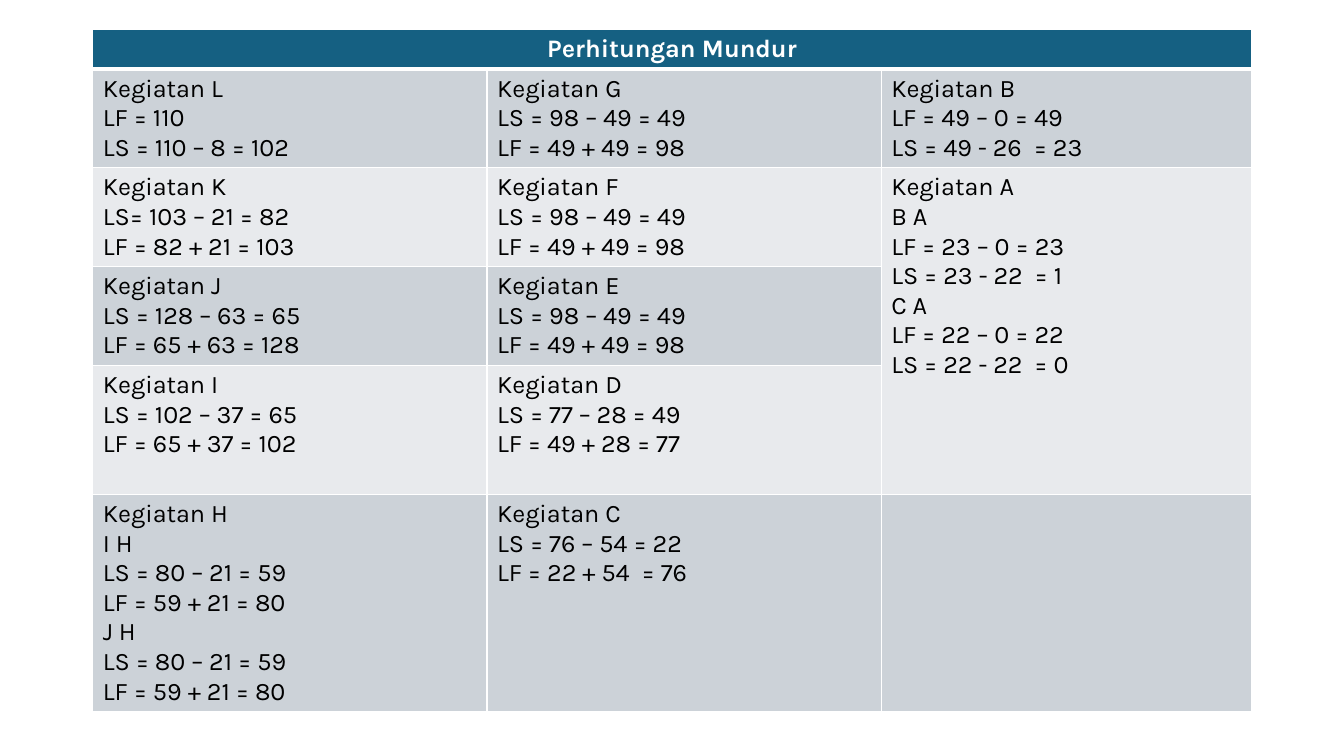
"""Build the slide with the backward-pass calculation table."""
from lxml import etree
from pptx import Presentation
from pptx.dml.color import RGBColor
from pptx.enum.text import PP_ALIGN
from pptx.oxml.ns import qn
from pptx.util import Inches, Pt

CENTER, LEFT = PP_ALIGN.CENTER, PP_ALIGN.LEFT
FONT = "Karla"
COLORS = {"header": "156082", "dark": "CCD2D8", "light": "E8EAED",
          "text": "000000", "white": "FFFFFF"}
TITLE = "Perhitungan Mundur"
ROWS = [
    (["Kegiatan L", "LF = 110", "LS = 110 – 8 = 102"],
     ["Kegiatan G", "LS = 98 – 49 = 49", "LF = 49 + 49 = 98"],
     ["Kegiatan B", "LF = 49 – 0 = 49", "LS = 49 - 26  = 23"]),
    (["Kegiatan K", "LS= 103 – 21 = 82", "LF = 82 + 21 = 103"],
     ["Kegiatan F", "LS = 98 – 49 = 49", "LF = 49 + 49 = 98"],
     ["Kegiatan A", "B A", "LF = 23 – 0 = 23", "LS = 23 - 22  = 1",
      "C A", "LF = 22 – 0 = 22", "LS = 22 - 22  = 0"]),
    (["Kegiatan J", "LS = 128 – 63 = 65", "LF = 65 + 63 = 128"],
     ["Kegiatan E", "LS = 98 – 49 = 49", "LF = 49 + 49 = 98"], []),
    (["Kegiatan I", "LS = 102 – 37 = 65", "LF = 65 + 37 = 102"],
     ["Kegiatan D", "LS = 77 – 28 = 49", "LF = 49 + 28 = 77"], []),
    (["Kegiatan H", "I H", "LS = 80 – 21 = 59", "LF = 59 + 21 = 80",
      "J H", "LS = 80 – 21 = 59", "LF = 59 + 21 = 80"],
     ["Kegiatan C", "LS = 76 – 54 = 22", "LF = 22 + 54  = 76"], []),
]
COL_WIDTHS = [3.91, 3.91, 3.67]
ROW_HEIGHTS = [0.38, 0.98, 0.98, 0.98, 1.28, 2.15]


def rgb(name):
    return RGBColor.from_string(COLORS[name])


def set_borders(cell, top, bottom):
    tc_pr = cell._tc.get_or_add_tcPr()
    for tag, width in (("lnL", 1), ("lnR", 1), ("lnT", top), ("lnB", bottom)):
        ln = etree.SubElement(tc_pr, qn(f"a:{tag}"), w=str(Pt(width)))
        fill = etree.SubElement(ln, qn("a:solidFill"))
        etree.SubElement(fill, qn("a:srgbClr"), val=COLORS["white"])


def fill_cell(cell, lines, row):
    header = row == 0
    set_borders(cell, 3 if row == 1 else 1, 3 if header else 1)
    cell.fill.solid()
    band = "header" if header else "dark" if row % 2 else "light"
    cell.fill.fore_color.rgb = rgb(band)
    tf = cell.text_frame
    tf.text = "\n".join(lines)
    for p in tf.paragraphs:
        p.alignment = CENTER if header else LEFT
        p.font.name = FONT
        p.font.size = Pt(18)
        p.font.bold = header
        p.font.color.rgb = rgb("white" if header else "text")


def main():
    prs = Presentation()
    prs.slide_width, prs.slide_height = Inches(13.33), Inches(7.5)
    s = prs.slides.add_slide(prs.slide_layouts[6])
    grid = [([TITLE], [], [])] + ROWS
    table = s.shapes.add_table(
        len(grid), len(COL_WIDTHS), Inches(0.92), Inches(0.29),
        Inches(sum(COL_WIDTHS)), Inches(sum(ROW_HEIGHTS))).table
    for col, width in zip(table.columns, COL_WIDTHS):
        col.width = Inches(width)
    for row, height in zip(table.rows, ROW_HEIGHTS):
        row.height = Inches(height)
    for i, row in enumerate(grid):
        for j, lines in enumerate(row):
            fill_cell(table.cell(i, j), lines, i)
    table.cell(0, 0).merge(table.cell(0, 2))
    table.cell(2, 2).merge(table.cell(4, 2))
    prs.save("out.pptx")


if __name__ == "__main__":
    main()
